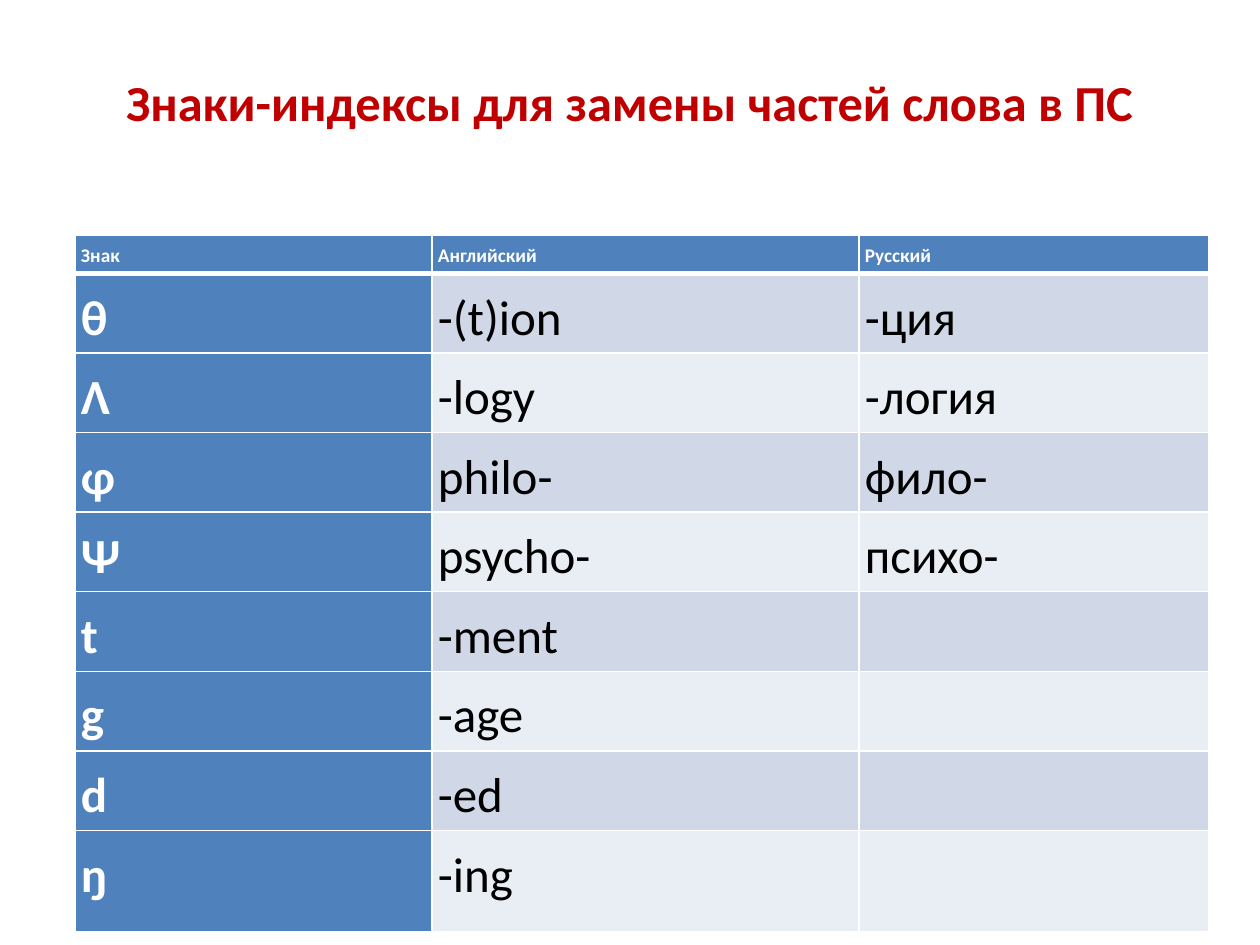
from lxml.etree import SubElement as Sub
from pptx import Presentation
from pptx.dml.color import RGBColor as Rgb
from pptx.enum.text import MSO_ANCHOR as Anchor, PP_ALIGN as Align
from pptx.oxml.ns import qn
from pptx.util import Emu, Pt

SCALE = 914400 / 126
FONT = "Calibri"
COLORS = {
    "title": "C00000",
    "head": "4F81BD",
    "odd": "D0D8E8",
    "even": "E9EDF4",
    "white": "FFFFFF",
    "black": "000000",
}
COLS = [357, 427, 350]
ROWS = [
    ("Знак", "Английский", "Русский"),
    ("θ", "-(t)ion", "-ция"),
    ("Λ", "-logy", "-логия"),
    ("φ", "philo-", "фило-"),
    ("Ψ", "psycho-", "психо-"),
    ("t", "-ment", ""),
    ("g", "-age", ""),
    ("d", "-ed", ""),
    ("ŋ", "-ing", ""),
]
ROW_H, LAST_H = 38, 101
PAD = 6


def px(n):
    return Emu(round(n * SCALE))


def add_run(para, text, size, color, bold):
    run = para.add_run()
    run.text = text
    font = run.font
    font.name, font.size, font.bold = FONT, Pt(size), bold
    font.color.rgb = Rgb.from_string(COLORS[color])


def add_title(slide, text):
    frame = slide.shapes.add_textbox(px(63), px(38), px(1134), px(127)).text_frame
    frame.word_wrap = True
    frame.vertical_anchor = Anchor.MIDDLE
    para = frame.paragraphs[0]
    para.alignment = Align.CENTER
    add_run(para, text, 28.8, "title", True)


def add_edge(cell, side, width):
    line = Sub(cell._tc.get_or_add_tcPr(), qn(f"a:ln{side}"), w=str(Pt(width)))
    Sub(Sub(line, qn("a:solidFill")), qn("a:srgbClr"), val=COLORS["white"])


def fill_cell(cell, text, row, col):
    """Style one cell: blue for headings, banded for the body."""
    head = row == 0 or col == 0
    for side in "LRTB":
        thick = (side == "B" and row == 0) or (side == "T" and row == 1)
        add_edge(cell, side, 3 if thick else 1)
    cell.fill.solid()
    tone = "head" if head else "odd" if row % 2 else "even"
    cell.fill.fore_color.rgb = Rgb.from_string(COLORS[tone])
    cell.margin_left = cell.margin_right = px(PAD)
    cell.margin_top = cell.margin_bottom = px(PAD)
    if text:
        para = cell.text_frame.paragraphs[0]
        para.line_spacing = 1.15
        size = 28 if row else 11
        add_run(para, text, size, "white" if head else "black", head)


def add_grid(slide):
    high = ROW_H * (len(ROWS) - 1) + LAST_H
    table = slide.shapes.add_table(
        len(ROWS), len(COLS), px(75), px(235), px(sum(COLS)), px(high)
    ).table
    table.horz_banding = False
    for col, width in zip(table.columns, COLS):
        col.width = px(width)
    for row in table.rows:
        row.height = px(ROW_H)
    table.rows[len(ROWS) - 1].height = px(LAST_H)
    for r, texts in enumerate(ROWS):
        for c, text in enumerate(texts):
            fill_cell(table.cell(r, c), text, r, c)


def main():
    prs = Presentation()
    prs.slide_width, prs.slide_height = px(1260), px(945)
    slide = prs.slides.add_slide(prs.slide_layouts[6])
    add_title(slide, "Знаки-индексы для замены частей слова в ПС")
    add_grid(slide)
    prs.save("out.pptx")


if __name__ == "__main__":
    main()
